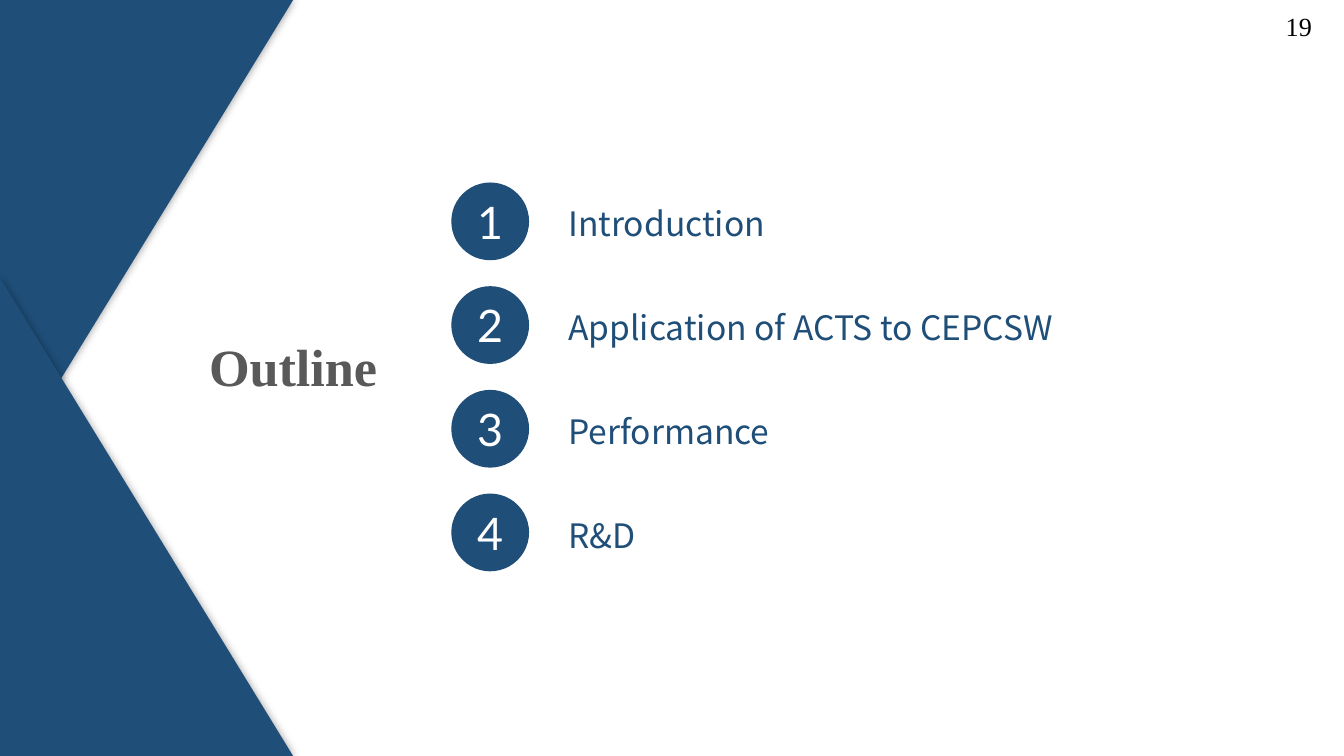
"""Build an outline slide with four numbered topics."""
from dataclasses import dataclass

from lxml import etree
from pptx import Presentation
from pptx.dml.color import RGBColor
from pptx.enum.shapes import MSO_SHAPE
from pptx.enum.text import MSO_ANCHOR, MSO_AUTO_SIZE, PP_ALIGN
from pptx.oxml.ns import qn
from pptx.shapes.autoshape import Shape
from pptx.shapes.shapetree import SlideShapes
from pptx.text.text import TextFrame
from pptx.util import Cm, Pt

OVAL = MSO_SHAPE.OVAL
WEDGE = MSO_SHAPE.RIGHT_TRIANGLE
MIDDLE = MSO_ANCHOR.MIDDLE
FIT = MSO_AUTO_SIZE.SHAPE_TO_FIT_TEXT
LEFT, CENTER = PP_ALIGN.LEFT, PP_ALIGN.CENTER


@dataclass(frozen=True)
class Style:
    font: str
    size: int
    color: RGBColor
    bold: bool = False


@dataclass(frozen=True)
class Theme:
    blue: RGBColor = RGBColor(0x1F, 0x4E, 0x78)
    title: Style = Style("Times New Roman", 28, RGBColor(0x59, 0x59, 0x59), True)
    digit: Style = Style("Lato", 24, RGBColor(0xFF, 0xFF, 0xFF))
    topic: Style = Style("Noto Sans CJK SC", 18, blue)
    page: Style = Style("Times New Roman", 14, RGBColor(0, 0, 0))


@dataclass(frozen=True)
class Box:
    left: float
    top: float
    width: float
    height: float

    def place(self) -> tuple[Cm, Cm, Cm, Cm]:
        return Cm(self.left), Cm(self.top), Cm(self.width), Cm(self.height)


@dataclass(frozen=True)
class Topic:
    text: str
    width: float


THEME = Theme()
WIDE, HIGH = 25.4, 14.29
REACH, DROP = 5.54, 9.04
FIRST, PITCH, DISC = 3.45, 1.96, 1.47
TOPICS = (
    Topic("Introduction", 4.32),
    Topic("Application of ACTS to CEPCSW", 10.26),
    Topic("Performance", 4.42),
    Topic("R&D", 1.98),
)


def write(frame: TextFrame, text: str, style: Style, align: PP_ALIGN) -> None:
    """Put one styled paragraph into a frame."""
    para = frame.paragraphs[0]
    para.text = text
    para.alignment = align
    font = para.font
    font.name, font.size, font.bold = style.font, Pt(style.size), style.bold
    font.color.rgb = style.color


def label(shapes: SlideShapes, box: Box, text: str, style: Style,
          align: PP_ALIGN = LEFT, wrap: bool = True) -> None:
    """Add a text box that wraps or fits its text."""
    frame = shapes.add_textbox(*box.place()).text_frame
    frame.word_wrap = wrap
    if not wrap:
        frame.auto_size = FIT
    write(frame, text, style, align)


def solid(shapes: SlideShapes, kind: MSO_SHAPE, box: Box) -> Shape:
    """Add a plain blue shape."""
    shape = shapes.add_shape(kind, *box.place())
    shape.shadow.inherit = False
    shape.fill.solid()
    shape.fill.fore_color.rgb = THEME.blue
    shape.line.fill.background()
    return shape


def wedge(shapes: SlideShapes, box: Box, turn: int) -> None:
    """Add a turned triangle with a soft shadow."""
    shape = solid(shapes, WEDGE, box)
    shape.rotation = turn
    effects = shape._element.spPr.find(qn("a:effectLst"))
    glow = etree.SubElement(effects, qn("a:outerShdw"), blurRad=str(Pt(5)),
                            dist="0", dir="0", algn="ctr", rotWithShape="0")
    color = etree.SubElement(glow, qn("a:srgbClr"), val="000000")
    etree.SubElement(color, qn("a:alpha"), val="40000")


def entry(shapes: SlideShapes, index: int, topic: Topic) -> None:
    """Add a numbered disc and its topic."""
    top = FIRST + index * PITCH
    disc = solid(shapes, OVAL, Box(8.53, top, DISC, DISC))
    disc.text_frame.vertical_anchor = MIDDLE
    write(disc.text_frame, str(index + 1), THEME.digit, CENTER)
    label(shapes, Box(10.49, top + 0.27, topic.width, 1.02), topic.text,
          THEME.topic, wrap=False)


def main() -> None:
    """Build and save the slide."""
    deck = Presentation()
    deck.slide_width, deck.slide_height = Cm(WIDE), Cm(HIGH)
    shapes = deck.slides.add_slide(deck.slide_layouts[6]).shapes
    shift = (DROP - REACH) / 2
    wedge(shapes, Box(-shift, shift, DROP, REACH), 90)
    wedge(shapes, Box(0, HIGH - DROP, REACH, DROP), 0)
    label(shapes, Box(1.55, 6.2, 7.98, 1.47), "Outline", THEME.title, CENTER)
    for index, topic in enumerate(TOPICS):
        entry(shapes, index, topic)
    label(shapes, Box(24.05, 0.08, 1.19, 0.66), "19", THEME.page)
    deck.save("out.pptx")


if __name__ == "__main__":
    main()
